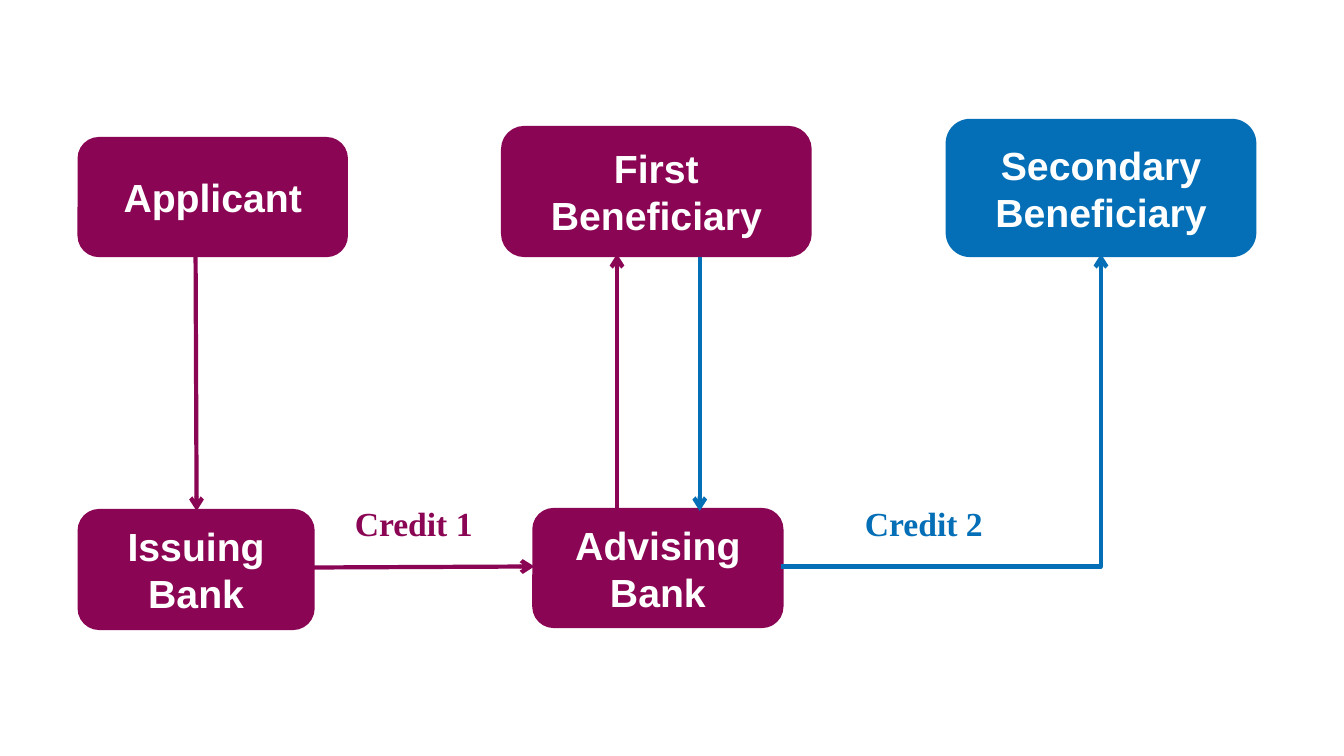
"""Draw the flow of a transferable credit between its parties and banks."""
from dataclasses import dataclass

from pptx import Presentation
from pptx.dml.color import RGBColor
from pptx.enum.shapes import MSO_CONNECTOR, MSO_SHAPE
from pptx.enum.text import MSO_ANCHOR, PP_ALIGN
from pptx.oxml.ns import qn
from pptx.oxml.xmlchemy import OxmlElement
from pptx.shapes.connector import Connector
from pptx.slide import Slide
from pptx.text.text import TextFrame
from pptx.util import Inches, Pt


@dataclass(frozen=True)
class Theme:
    """Hold the colours, fonts and sizes of the slide."""
    plum: RGBColor = RGBColor.from_string("8A0554")
    blue: RGBColor = RGBColor.from_string("046FB6")
    white: RGBColor = RGBColor.from_string("FFFFFF")
    sans: str = "Arial"
    serif: str = "Times New Roman"
    party: Pt = Pt(28)
    credit: Pt = Pt(24)
    stroke: Pt = Pt(3)


@dataclass(frozen=True)
class Party:
    """Describe one rounded box."""
    text: str
    left: float
    top: float
    width: float
    height: float
    color: RGBColor


@dataclass(frozen=True)
class Flow:
    """Describe one arrow between two points."""
    start: tuple[float, float]
    end: tuple[float, float]
    color: RGBColor
    bent: bool = False


@dataclass(frozen=True)
class Label:
    """Describe one credit label."""
    text: str
    left: float
    color: RGBColor


THEME = Theme()
PARTIES = [
    Party("Applicant", 0.79, 1.38, 2.64, 1.15, THEME.plum),
    Party("Issuing Bank", 0.79, 5.07, 2.31, 1.16, THEME.plum),
    Party("Advising Bank", 5.3, 5.06, 2.45, 1.15, THEME.plum),
    Party("First Beneficiary", 4.99, 1.27, 3.04, 1.26, THEME.plum),
    Party("Secondary\nBeneficiary", 9.4, 1.2, 3.04, 1.33, THEME.blue),
]
FLOWS = [
    Flow((3.1, 5.63), (5.3, 5.62), THEME.plum),
    Flow((6.12, 5.05), (6.12, 2.52), THEME.plum),
    Flow((1.94, 2.55), (1.95, 5.07), THEME.plum),
    Flow((6.94, 2.55), (6.94, 5.07), THEME.blue),
    Flow((7.75, 5.62), (10.92, 2.52), THEME.blue, True),
]
LABELS = [
    Label("Credit 1", 3.42, THEME.plum),
    Label("Credit 2", 8.48, THEME.blue),
]


def assign(target: object, values: dict[str, object]) -> None:
    """Set each named attribute on the target."""
    for name, value in values.items():
        setattr(target, name, value)


def write(frame: TextFrame, text: str, align: PP_ALIGN, color: RGBColor,
          values: dict[str, object]) -> None:
    """Fill a frame with bold text in one format."""
    frame.text = text
    for line in frame.paragraphs:
        line.alignment = align
        assign(line.font, {"bold": True, **values})
        line.font.color.rgb = color


def add_party(slide: Slide, party: Party) -> None:
    """Draw one rounded box with centred text."""
    box = slide.shapes.add_shape(
        MSO_SHAPE.FLOWCHART_ALTERNATE_PROCESS, Inches(party.left),
        Inches(party.top), Inches(party.width), Inches(party.height))
    box.shadow.inherit = False
    box.fill.solid()
    box.fill.fore_color.rgb = party.color
    box.line.color.rgb = party.color
    box.line.width = THEME.stroke
    assign(box.text_frame, {"word_wrap": True,
                            "vertical_anchor": MSO_ANCHOR.MIDDLE})
    write(box.text_frame, party.text, PP_ALIGN.CENTER, THEME.white,
          {"name": THEME.sans, "size": THEME.party})


def add_flow(slide: Slide, flow: Flow) -> Connector:
    """Draw one arrow, with a single corner when bent."""
    kind = MSO_CONNECTOR.ELBOW if flow.bent else MSO_CONNECTOR.STRAIGHT
    ends = [Inches(value) for value in flow.start + flow.end]
    arrow = slide.shapes.add_connector(kind, *ends)
    arrow.line.color.rgb = flow.color
    arrow.line.width = THEME.stroke
    tip = OxmlElement("a:tailEnd")
    tip.set("type", "arrow")
    arrow.line._get_or_add_ln().append(tip)
    props = arrow._element.spPr
    props.append(OxmlElement("a:effectLst"))
    if flow.bent:
        props.find(qn("a:prstGeom")).set("prst", "bentConnector2")
    return arrow


def add_label(slide: Slide, label: Label) -> None:
    """Write one credit label above its arrow."""
    box = slide.shapes.add_textbox(Inches(label.left), Inches(4.94),
                                   Inches(1.45), Inches(0.5))
    box.text_frame.word_wrap = True
    write(box.text_frame, label.text, PP_ALIGN.LEFT, label.color,
          {"name": THEME.serif, "size": THEME.credit})


def main() -> None:
    """Build the slide and save it."""
    deck = Presentation()
    assign(deck, {"slide_width": Inches(13.33), "slide_height": Inches(7.5)})
    slide = deck.slides.add_slide(deck.slide_layouts[6])
    for party in PARTIES:
        add_party(slide, party)
    for flow in FLOWS:
        add_flow(slide, flow)
    for label in LABELS:
        add_label(slide, label)
    deck.save("out.pptx")


if __name__ == "__main__":
    main()
